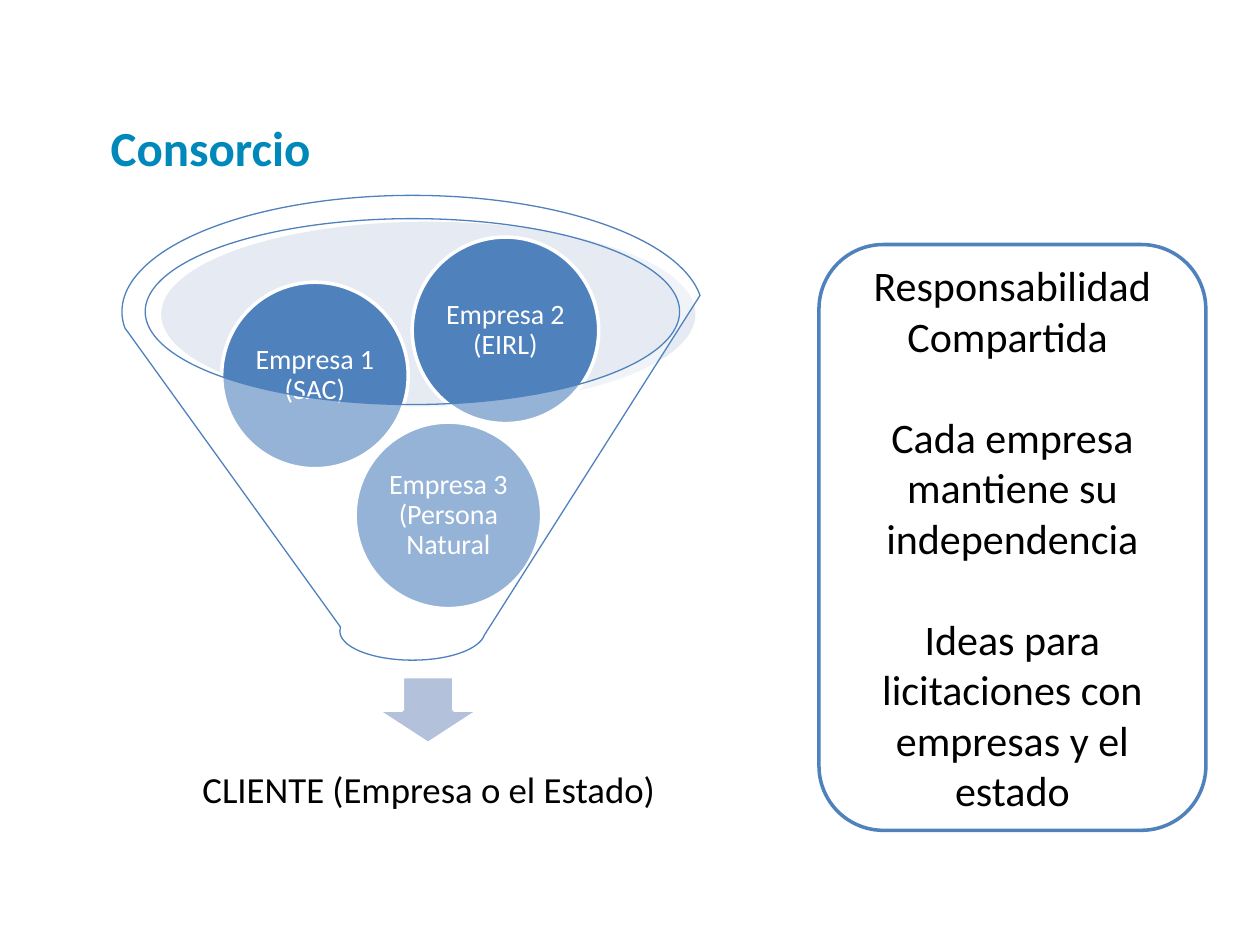
"""Build the Consorcio slide: a funnel of companies serving one client."""
from lxml import etree
from pptx import Presentation
from pptx.dml.color import RGBColor
from pptx.enum.shapes import MSO_SHAPE
from pptx.enum.text import MSO_ANCHOR, MSO_AUTO_SIZE, PP_ALIGN
from pptx.oxml.ns import qn
from pptx.util import Cm, Pt

OVAL, ARROW = MSO_SHAPE.OVAL, MSO_SHAPE.DOWN_ARROW
FUNNEL, ROUNDED = MSO_SHAPE.FUNNEL, MSO_SHAPE.ROUNDED_RECTANGLE
LEFT, CENTER = PP_ALIGN.LEFT, PP_ALIGN.CENTER
MIDDLE, NO_FIT = MSO_ANCHOR.MIDDLE, MSO_AUTO_SIZE.NONE

THEME = {
    "font": "Calibri",
    "title": "0088BA", "blue": "4F81BD", "rim": "C2CDE1", "arrow": "B3C1DB",
    "white": "FFFFFF", "black": "000000",
    "title_size": 28, "client_size": 21, "circle_size": 16, "note_size": 24,
}


def write(sp, *paragraphs, size, color, bold=False, align=CENTER,
          spacing=1.0, before=0, inset=(0.25, 0.13)):
    tf = sp.text_frame
    tf.word_wrap = True
    tf.auto_size = NO_FIT
    tf.vertical_anchor = MIDDLE
    tf.margin_left = tf.margin_right = Cm(inset[0])
    tf.margin_top = tf.margin_bottom = Cm(inset[1])
    for i, text in enumerate(paragraphs):
        p = tf.add_paragraph() if i else tf.paragraphs[0]
        p.alignment = align
        p.line_spacing = spacing
        p.space_before = Pt(before if i else 0)
        r = p.add_run()
        r.text = text
        r.font.name = THEME["font"]
        r.font.size = Pt(THEME[size])
        r.font.bold = bold
        r.font.color.rgb = RGBColor.from_string(THEME[color])


def add_shape(kind, left, top, width, height, fill, line=None, weight=2, alpha=None):
    sp = s.shapes.add_shape(kind, Cm(left), Cm(top), Cm(width), Cm(height))
    sp.shadow.inherit = False
    sp.fill.solid()
    sp.fill.fore_color.rgb = RGBColor.from_string(THEME[fill])
    if alpha:
        clr = sp.fill._xPr.find(qn("a:solidFill"))[0]
        etree.SubElement(clr, qn("a:alpha"), val=str(alpha * 1000))
    if line:
        sp.line.color.rgb = RGBColor.from_string(THEME[line])
        sp.line.width = Pt(weight)
    else:
        sp.line.fill.background()
    return sp


prs = Presentation()
prs.slide_width, prs.slide_height = Cm(25.4), Cm(19.05)
s = prs.slides.add_slide(prs.slide_layouts[5])

title = s.shapes.title
title.left, title.top, title.width, title.height = Cm(1.98), Cm(1.98), Cm(20.52), Cm(1.96)
write(title, "Consorcio", size="title_size", color="title", bold=True, align=LEFT)

add_shape(OVAL, 3.25, 4.47, 10.77, 3.73, "rim", alpha=40)
add_shape(ARROW, 7.59, 13.64, 2.08, 1.35, "arrow", "white")

client = s.shapes.add_textbox(Cm(3.63), Cm(14.71), Cm(10.03), Cm(2.51))
write(client, "CLIENTE (Empresa o el Estado)", size="client_size", color="black",
      spacing=0.9, inset=(0.4, 0.4))

for text, left, top in (
    ("Empresa 3 (Persona Natural", 7.16, 8.51),
    ("Empresa 1 (SAC)", 4.47, 5.69),
    ("Empresa 2 (EIRL)", 8.31, 4.78),
):
    circle = add_shape(OVAL, left, top, 3.76, 3.76, "blue", "white")
    write(circle, text, size="circle_size", color="white", spacing=0.9, inset=(0.05, 0.05))

add_shape(FUNNEL, 2.46, 3.94, 11.71, 9.37, "white", "blue", weight=0.75, alpha=40)

note = add_shape(ROUNDED, 16.51, 4.93, 7.8, 11.81, "white", "blue")
write(note, "Responsabilidad Compartida ", "Cada empresa mantiene su independencia",
      "Ideas para licitaciones con empresas y el estado",
      size="note_size", color="black", before=29)

prs.save("out.pptx")
